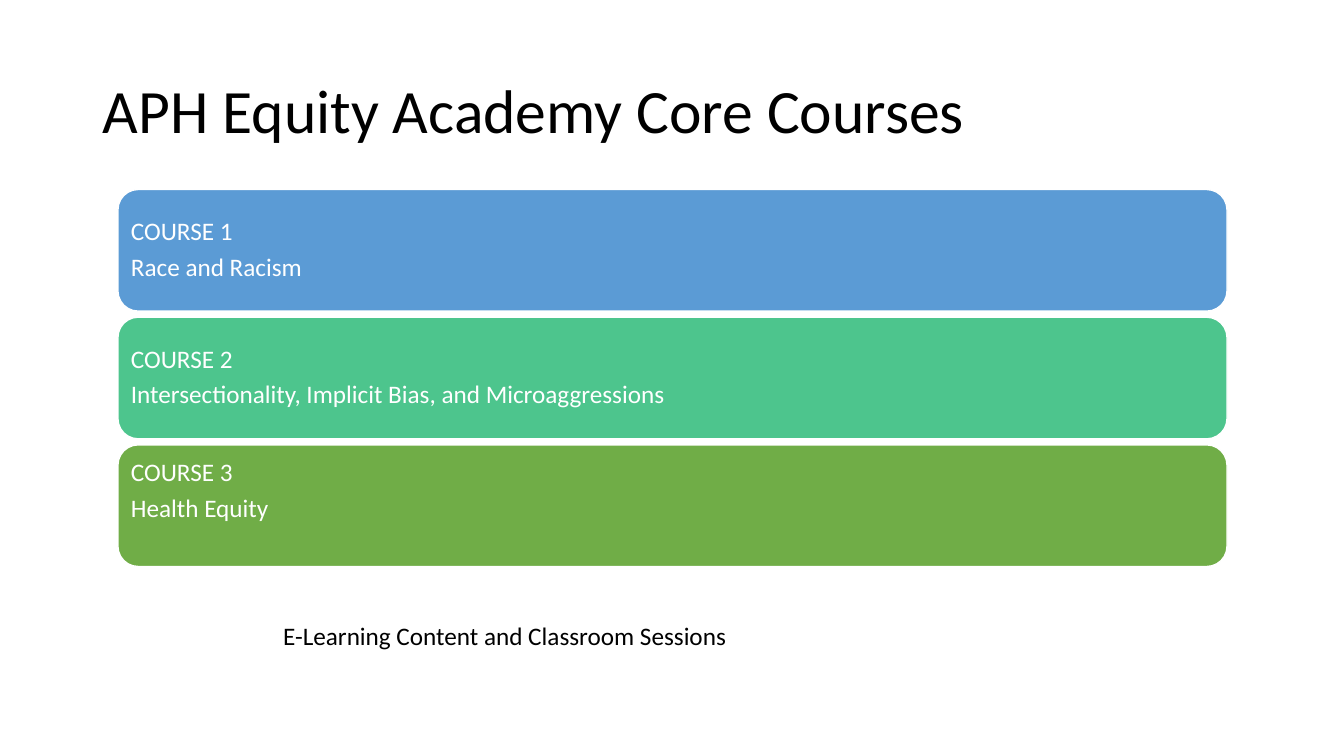
import pptx
import pptx.util
import pptx.dml.color
import pptx.enum.shapes
import pptx.enum.text

WIDTH, HEIGHT = 13.33, 7.5
COLORS = {"ink": "000000", "paper": "FFFFFF", "blue": "5B9BD5", "mint": "4DC58D", "green": "70AD47"}
COURSES = [
    ("COURSE 1", "Race and Racism", "blue", 0.07),
    ("COURSE 2", "Intersectionality, Implicit Bias, and Microaggressions", "mint", 0.07),
    ("COURSE 3", "Health Equity", "green", 0.36),
]
ROW_GAP = 0.06
INSET = 0.07
Inches = pptx.util.Inches
Points = pptx.util.Pt


def color(name):
    return pptx.dml.color.RGBColor.from_string(COLORS[name])


def apply_format(target, values):
    for name, value in values.items():
        setattr(target, name, value)


def place(shape, box):
    names = ("left", "top", "width", "height")
    apply_format(shape, {name: Inches(length) for name, length in zip(names, box)})


def write_lines(frame, lines, size, ink, paragraph_format):
    frame.text = "\n".join(lines)
    for para in frame.paragraphs:
        apply_format(para, {"alignment": pptx.enum.text.PP_ALIGN.LEFT, **paragraph_format})
        for span in para.runs:
            apply_format(span.font, {"name": "Calibri", "size": Points(size)})
            span.font.color.rgb = color(ink)


def add_title(page, box):
    title = page.shapes.title
    place(title, box)
    apply_format(title.text_frame, {
        "word_wrap": True,
        "auto_size": pptx.enum.text.MSO_AUTO_SIZE.NONE,
        "vertical_anchor": pptx.enum.text.MSO_ANCHOR.MIDDLE,
    })
    write_lines(title.text_frame, ["APH Equity Academy Core Courses"], 44, "ink", {"line_spacing": 0.9})


def add_course(page, box, lines, fill, bottom_inset):
    left, top, width, height = map(Inches, box)
    bar = page.shapes.add_shape(pptx.enum.shapes.MSO_SHAPE.ROUNDED_RECTANGLE, left, top, width, height)
    bar.shadow.inherit = False
    bar.fill.solid()
    bar.fill.fore_color.rgb = color(fill)
    bar.line.color.rgb = color("paper")
    bar.line.width = Points(1)
    apply_format(bar.text_frame, {
        "word_wrap": True,
        "vertical_anchor": pptx.enum.text.MSO_ANCHOR.MIDDLE,
        "margin_left": Inches(INSET),
        "margin_right": Inches(INSET),
        "margin_top": Inches(INSET),
        "margin_bottom": Inches(bottom_inset),
    })
    write_lines(bar.text_frame, lines, 18, "paper", {"line_spacing": 0.9, "space_after": Points(6)})


def add_courses(page, box):
    left, top, width, height = box
    row_height = (height - ROW_GAP * (len(COURSES) - 1)) / len(COURSES)
    for row, (label, subject, fill, bottom_inset) in enumerate(COURSES):
        row_top = top + row * (row_height + ROW_GAP)
        add_course(page, (left, row_top, width, row_height), [label, subject], fill, bottom_inset)


def add_delivery_note(page, box):
    note = page.shapes.add_textbox(*map(Inches, box))
    apply_format(note.text_frame, {
        "word_wrap": False,
        "auto_size": pptx.enum.text.MSO_AUTO_SIZE.SHAPE_TO_FIT_TEXT,
    })
    write_lines(note.text_frame, ["E-Learning Content and Classroom Sessions"], 18, "ink", {})


def main():
    deck = pptx.Presentation()
    apply_format(deck, {"slide_width": Inches(WIDTH), "slide_height": Inches(HEIGHT)})
    page = deck.slides.add_slide(deck.slide_layouts[5])
    add_title(page, (0.92, 0.4, 11.5, 1.45))
    add_courses(page, (1.17, 1.88, 11, 3.74))
    add_delivery_note(page, (2.71, 6.1, 4.65, 0.4))
    deck.save("out.pptx")


if __name__ == "__main__":
    main()
